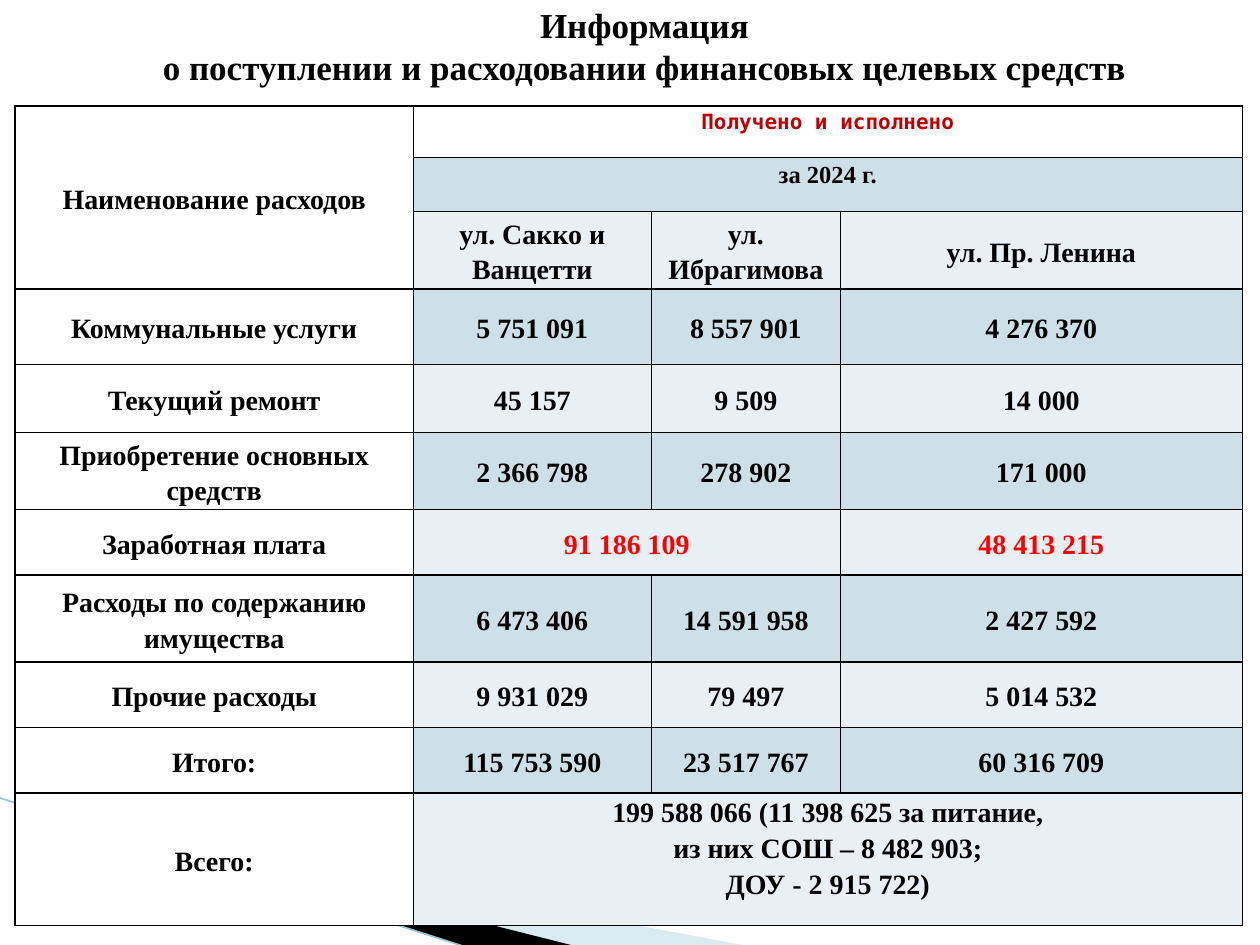
import pptx
import pptx.util
import pptx.dml.color
import pptx.enum.shapes
import pptx.enum.text
import pptx.oxml
import pptx.oxml.ns
import lxml.etree

Inches, Pt = pptx.util.Inches, pptx.util.Pt
Anchor = pptx.enum.text.MSO_ANCHOR
qn = pptx.oxml.ns.qn

TITLE = ["Информация", "о поступлении и расходовании финансовых целевых средств"]
ROWS = [
    ["Наименование расходов", "Получено и исполнено", "", ""],
    ["", "за 2024 г.", "", ""],
    ["", "ул. Сакко и Ванцетти", "ул. Ибрагимова", "ул. Пр. Ленина"],
    ["Коммунальные услуги", "5 751 091", "8 557 901", "4 276 370"],
    ["Текущий ремонт", "45 157", "9 509", "14 000"],
    ["Приобретение основных средств", "2 366 798", "278 902", "171 000"],
    ["Заработная плата", "91 186 109", "", "48 413 215"],
    ["Расходы по содержанию имущества", "6 473 406", "14 591 958", "2 427 592"],
    ["Прочие расходы", "9 931 029", "79 497", "5 014 532"],
    ["Итого:", "115 753 590", "23 517 767", "60 316 709"],
    ["Всего:", "199 588 066 (11 398 625 за питание,\n"
     "из них СОШ – 8 482 903;\nДОУ - 2 915 722)", "", ""],
]
MERGES = [(0, 0, 2, 0), (0, 1, 0, 3), (1, 1, 1, 3), (6, 1, 6, 2), (10, 1, 10, 3)]
WIDTHS = [3.16, 1.89, 1.5, 3.19]
HEIGHTS = [0.41, 0.43, 0.61, 0.6, 0.54, 0.61, 0.52, 0.69, 0.52, 0.52, 1.05]
LEFT, TOP = 0.12, 0.84

THEME = {
    "font": "Times New Roman", "mono": "DejaVu Sans Mono",
    "title": 20, "body": 16, "year": 14, "head": 12,
    "ink": "000000", "red": "FF0000", "dark red": "C00000",
    "white": "FFFFFF", "bands": ["E8F0F4", "CDE0E8"],
    "sky": "A0CBDC", "line": "97C5D8",
}
# Text styles that differ from the body, by (row, column)
STYLES = {
    (0, 1): {"size": "head", "name": "mono", "color": "dark red"},
    (1, 1): {"size": "year"},
    (6, 1): {"color": "red"},
    (6, 3): {"color": "red"},
}
HIGH = {(0, 1), (1, 1), (10, 1)}
WEDGES = [
    ([(0.55, 6.51), (5.95, 7.51), (4.56, 7.51), (0.55, 6.5)], "sky", 40),
    ([(0.53, 6.49), (4.57, 7.51), (3.72, 7.52), (0.54, 6.5)], "ink", 100),
]


def rgb(key):
    return pptx.dml.color.RGBColor.from_string(THEME.get(key, key))


def write(frame, lines, size="body", name="font", color="ink", space=None):
    for i, line in enumerate(lines):
        para = frame.paragraphs[0] if i == 0 else frame.add_paragraph()
        para.alignment = pptx.enum.text.PP_ALIGN.CENTER
        if space:
            para.line_spacing = space
        run = para.add_run()
        run.text = line
        look = {"size": Pt(THEME[size]), "name": THEME[name], "bold": True}
        for key, value in look.items():
            setattr(run.font, key, value)
        run.font.color.rgb = rgb(color)


def border(cell):
    props = cell._tc.get_or_add_tcPr()
    for side in ("lnL", "lnR", "lnT", "lnB"):
        line = lxml.etree.SubElement(props, qn("a:" + side), w=str(Pt(1)))
        fill = lxml.etree.SubElement(line, qn("a:solidFill"))
        lxml.etree.SubElement(fill, qn("a:srgbClr"), val=THEME["ink"])


def wedge(slide, points, color, alpha):
    spots = [(Inches(x), Inches(y)) for x, y in points]
    pen = slide.shapes.build_freeform(*spots[0])
    pen.add_line_segments(spots[1:], close=True)
    shape = pen.convert_to_shape()
    shape.shadow.inherit = False
    shape.line.fill.background()
    shape.fill.solid()
    shape.fill.fore_color.rgb = rgb(color)
    if alpha < 100:
        tint = shape.fill._xPr.find(".//" + qn("a:srgbClr"))
        lxml.etree.SubElement(tint, qn("a:alpha"), val=str(alpha * 1000))


def decor(slide):
    for item in WEDGES:
        wedge(slide, *item)
    ends = [Inches(v) for v in (-0.01, 6.33, 3.71, 7.52)]
    line = slide.shapes.add_connector(pptx.enum.shapes.MSO_CONNECTOR.STRAIGHT, *ends)
    line.line.color.rgb = rgb("line")
    line.line.width = Pt(0.95)
    lxml.etree.SubElement(line._element.spPr, qn("a:effectLst"))


def title(slide):
    box = slide.shapes.add_textbox(*[Inches(v) for v in (0.35, -0.02, 9.53, 0.77)])
    box.text_frame.word_wrap = True
    box.text_frame.vertical_anchor = Anchor.MIDDLE
    write(box.text_frame, TITLE, size="title")


def grid(slide):
    area = [Inches(v) for v in (LEFT, TOP, sum(WIDTHS), sum(HEIGHTS))]
    table = slide.shapes.add_table(len(ROWS), len(WIDTHS), *area).table
    table.first_row = table.horz_banding = False
    for col, width in zip(table.columns, WIDTHS):
        col.width = Inches(width)
    for row, height in zip(table.rows, HEIGHTS):
        row.height = Inches(height)
    pads = {"margin_left": Inches(0.07), "margin_right": Inches(0.07),
            "margin_top": 0, "margin_bottom": 0}
    for r, texts in enumerate(ROWS):
        for c, text in enumerate(texts):
            cell = table.cell(r, c)
            for key, value in pads.items():
                setattr(cell, key, value)
            cell.vertical_anchor = Anchor.TOP if (r, c) in HIGH else Anchor.MIDDLE
            border(cell)
            cell.fill.solid()
            plain = r == 0 or c == 0
            cell.fill.fore_color.rgb = rgb("white" if plain else THEME["bands"][r % 2])
            if text:
                write(cell.text_frame, text.split("\n"), space=1.15,
                      **STYLES.get((r, c), {}))
    for top, left, bottom, right in MERGES:
        table.cell(top, left).merge(table.cell(bottom, right))


def main():
    deck = pptx.Presentation()
    deck.slide_width, deck.slide_height = Inches(10), Inches(7.5)
    slide = deck.slides.add_slide(deck.slide_layouts[6])
    decor(slide)
    title(slide)
    grid(slide)
    deck.save("out.pptx")


if __name__ == "__main__":
    main()
